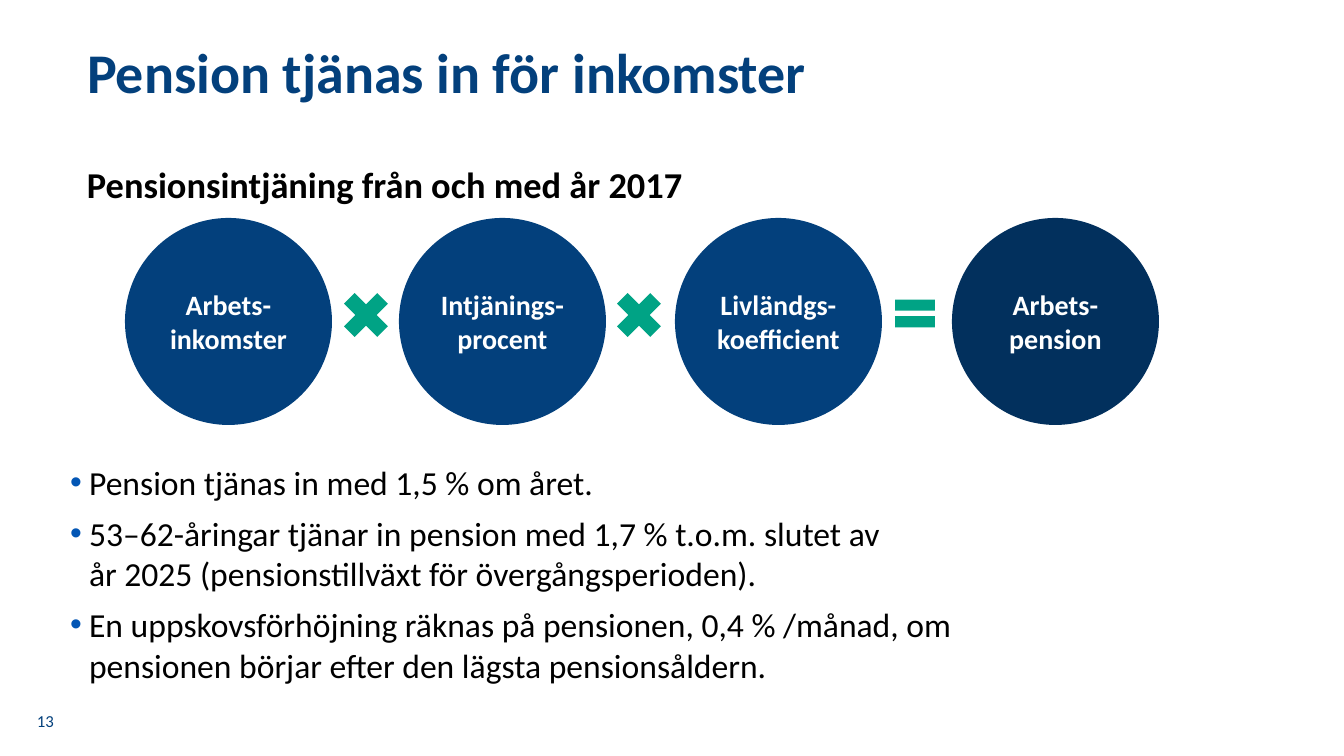
from dataclasses import dataclass

from lxml import etree
from pptx import Presentation
from pptx.dml.color import RGBColor
from pptx.enum.shapes import MSO_SHAPE
from pptx.enum.text import MSO_ANCHOR, MSO_AUTO_SIZE, PP_ALIGN
from pptx.oxml.ns import qn
from pptx.util import Emu, Pt

CIRCLE, TIMES, EQUALS = MSO_SHAPE.OVAL, MSO_SHAPE.MATH_MULTIPLY, MSO_SHAPE.MATH_EQUAL
TOP, MIDDLE = MSO_ANCHOR.TOP, MSO_ANCHOR.MIDDLE
LEFT, CENTER = PP_ALIGN.LEFT, PP_ALIGN.CENTER
NO_FIT = MSO_AUTO_SIZE.NONE
EMU_PER_PX = 914400 / 100.8
TITLE_AND_CONTENT = 1


@dataclass(frozen=True)
class Theme:
    font: str = "Calibri"
    blue: str = "03407C"
    navy: str = "02305D"
    green: str = "00A385"
    bullet: str = "0356B5"
    black: str = "000000"
    white: str = "FFFFFF"
    title_size: int = 40
    heading_size: int = 26
    body_size: int = 24
    circle_size: int = 20
    number_size: int = 12


THEME = Theme()

BULLETS = [
    "Pension tjänas in med 1,5 % om året.",
    "53–62-åringar tjänar in pension med 1,7 % t.o.m. slutet av\v"
    "år 2025 (pensionstillväxt för övergångsperioden).",
    "En uppskovsförhöjning räknas på pensionen, 0,4 % /månad, om "
    "pensionen börjar efter den lägsta pensionsåldern.",
]
FACTORS = [
    (125, ["Arbets-", "inkomster"], THEME.blue),
    (399, ["Intjänings-", "procent"], THEME.blue),
    (675, ["Livländgs-", "koefficient"], THEME.blue),
    (952, ["Arbets-pension"], THEME.navy),
]
SIGNS = [
    (TIMES, (334, 283, 64, 64)),
    (TIMES, (607, 283, 64, 64)),
    (EQUALS, (888, 290, 54, 47)),
]


def px(length):
    return Emu(round(length * EMU_PER_PX))


def place(shape, area):
    shape.left, shape.top, shape.width, shape.height = map(px, area)


def add_bullet(para):
    properties = para._p.get_or_add_pPr()
    properties.set("marL", str(px(19)))
    properties.set("indent", str(-px(19)))
    color = etree.SubElement(properties, qn("a:buClr"))
    etree.SubElement(color, qn("a:srgbClr"), val=THEME.bullet)
    etree.SubElement(properties, qn("a:buFont"), typeface="Arial")
    etree.SubElement(properties, qn("a:buChar"), char="•")


def write(shape, lines, *, size, color, bold=False, align=LEFT, anchor=TOP,
          gap=0, spacing=1.0, bullets=False):
    frame = shape.text_frame
    frame.word_wrap = True
    frame.auto_size = NO_FIT
    frame.vertical_anchor = anchor
    for index, line in enumerate(lines):
        para = frame.add_paragraph() if index else frame.paragraphs[0]
        para.text = line
        if bullets:
            add_bullet(para)
        para.alignment = align
        para.line_spacing = spacing
        para.space_before = Pt(gap if index else 0)
        for span in para.runs:
            span.font.name = THEME.font
            span.font.size = Pt(size)
            span.font.bold = bold
            span.font.color.rgb = RGBColor.from_string(color)


def add_text(page, area, text, **style):
    box = page.shapes.add_textbox(*map(px, area))
    write(box, [text], **style)


def add_solid(shapes, kind, area, fill):
    shape = shapes.add_shape(kind, *map(px, area))
    shape.shadow.inherit = False
    shape.fill.solid()
    shape.fill.fore_color.rgb = RGBColor.from_string(fill)
    shape.line.fill.background()
    return shape


def add_formula(page):
    shapes = page.shapes.add_group_shape().shapes
    for left, lines, fill in FACTORS:
        circle = add_solid(shapes, CIRCLE, (left, 218, 207, 207), fill)
        write(circle, lines, size=THEME.circle_size, color=THEME.white,
              bold=True, align=CENTER, anchor=MIDDLE)
    for kind, area in SIGNS:
        add_solid(shapes, kind, area, THEME.green)


def main():
    deck = Presentation()
    deck.slide_width, deck.slide_height = px(1344), px(756)
    page = deck.slides.add_slide(deck.slide_layouts[TITLE_AND_CONTENT])

    title, body = page.placeholders
    place(title, (77, 41, 1051, 69))
    write(title, ["Pension tjänas in för inkomster"], size=THEME.title_size,
          color=THEME.blue, bold=True, anchor=MIDDLE, spacing=0.9)
    add_text(page, (77, 157, 972, 60), "Pensionsintjäning från och med år 2017",
             size=THEME.heading_size, color=THEME.black, bold=True)
    place(body, (60, 437, 1032, 275))
    write(body, BULLETS, size=THEME.body_size, color=THEME.black,
          gap=7.5, bullets=True)
    body.text_frame.paragraphs[0].line_spacing = 1.5
    add_formula(page)
    add_text(page, (20, 701, 51, 40), "13", size=THEME.number_size,
             color=THEME.blue, align=CENTER, anchor=MIDDLE)
    deck.save("out.pptx")


if __name__ == "__main__":
    main()
